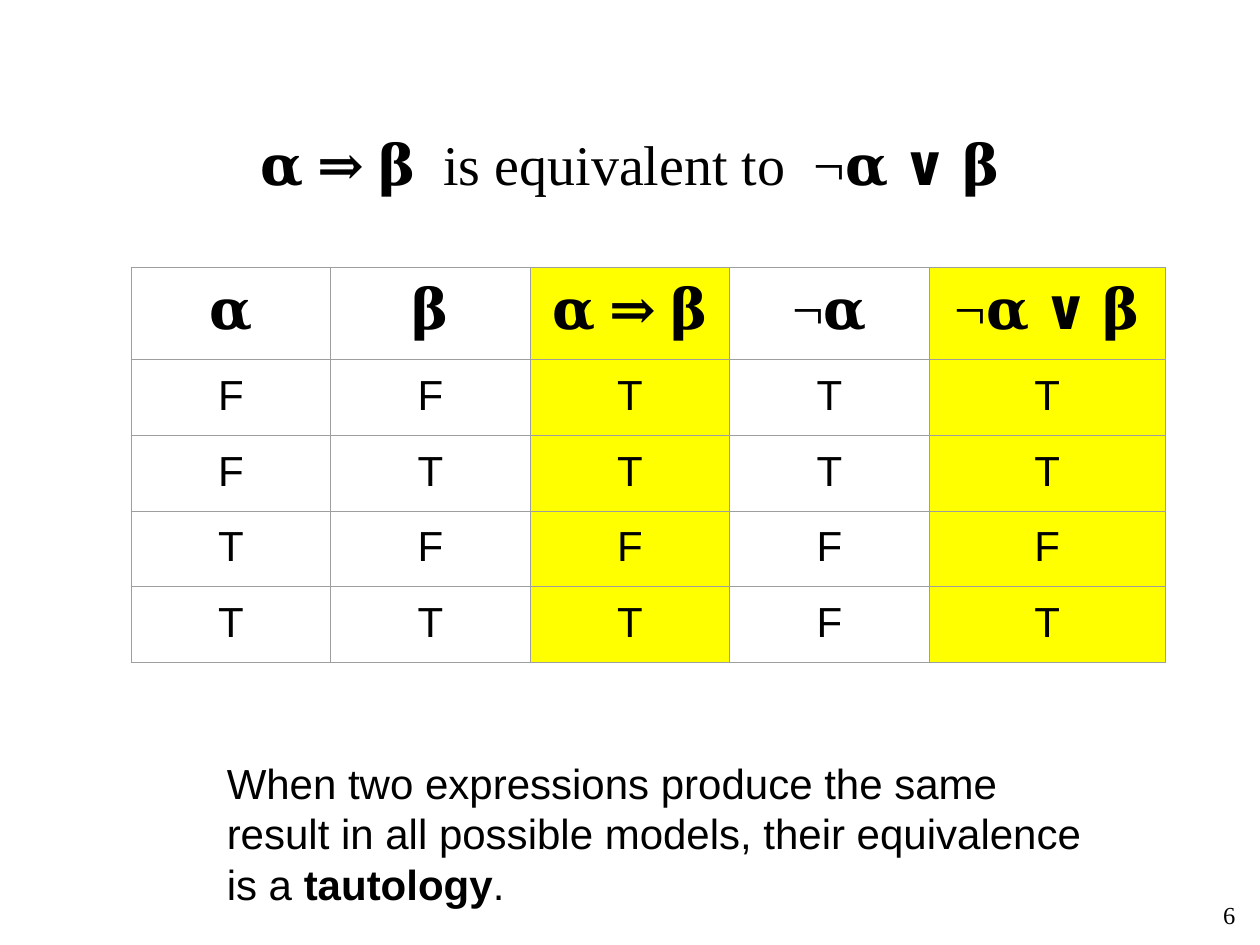
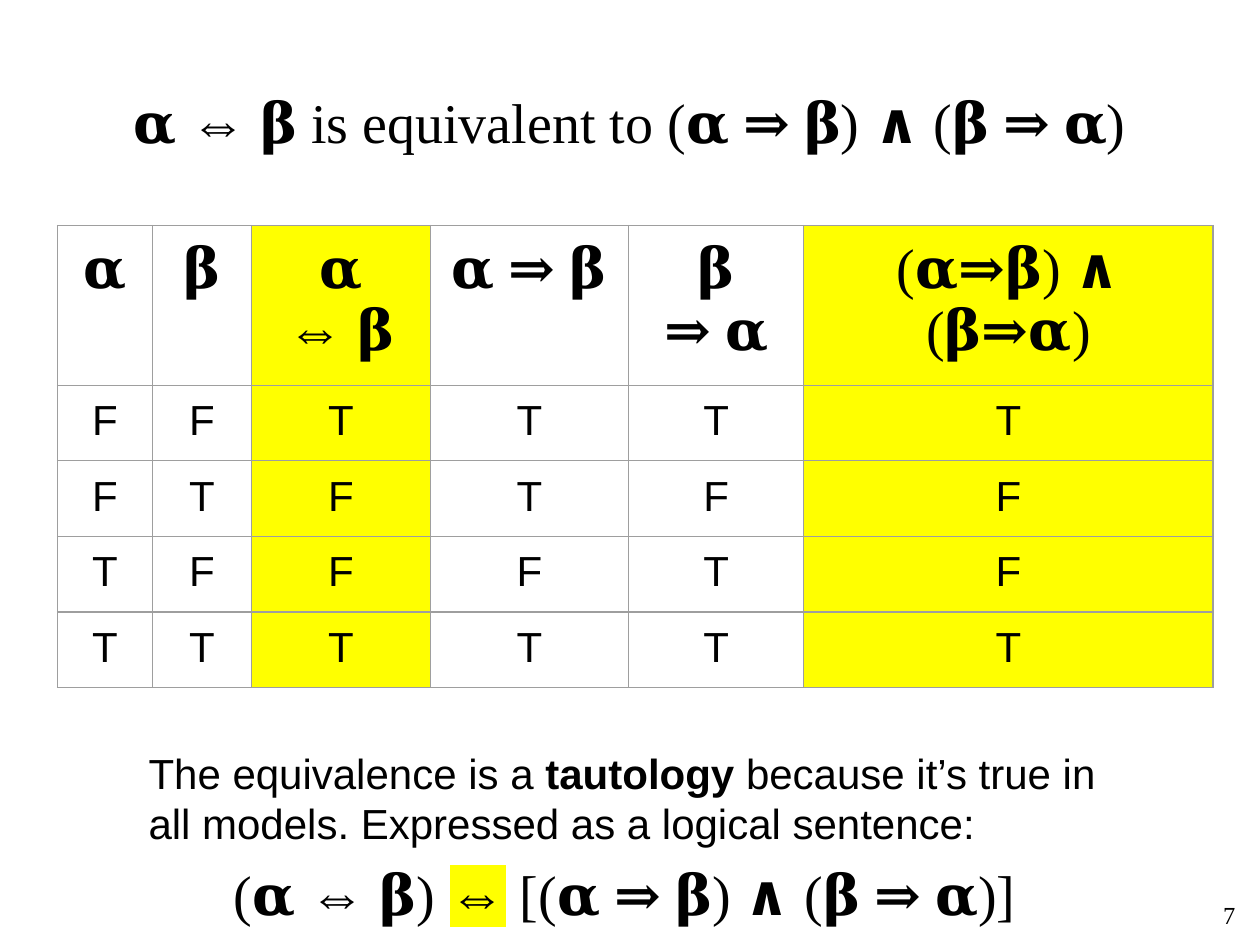
from dataclasses import dataclass
from itertools import product

from lxml import etree
from pptx import Presentation
from pptx.dml.color import RGBColor
from pptx.enum.text import MSO_ANCHOR, MSO_AUTO_SIZE, PP_ALIGN
from pptx.oxml.ns import qn
from pptx.util import Pt

LEFT, CENTER, RIGHT = PP_ALIGN.LEFT, PP_ALIGN.CENTER, PP_ALIGN.RIGHT
TOP, MIDDLE = MSO_ANCHOR.TOP, MSO_ANCHOR.MIDDLE
NO_FIT = MSO_AUTO_SIZE.NONE


@dataclass(frozen=True)
class Theme:
    ink: str = "000000"
    mark: str = "FFFF00"
    grid: str = "9E9E9E"
    serif: str = "Times New Roman"
    sans: str = "Arial"
    formula: int = 32
    body: int = 24
    number: int = 14
    formula_gap: float = 6.4
    border: float = 0.75
    inset: float = 7.2


class Deck:
    """Holds the theme and the current slide."""

    def __init__(self, theme):
        self.t = theme
        self.prs = Presentation()
        self.prs.slide_width, self.prs.slide_height = Pt(720), Pt(540)
        self.s = None

    # Text formatting
    def format_runs(self, p, font, size, align):
        p.alignment = align
        for r in p.runs:
            r.font.name, r.font.size = font, Pt(size)
            r.font.color.rgb = RGBColor.from_string(self.t.ink)

    def format_formula(self, p):
        p.space_before = Pt(self.t.formula_gap)
        self.format_runs(p, self.t.serif, self.t.formula, CENTER)

    def format_body(self, p, align=LEFT):
        self.format_runs(p, self.t.sans, self.t.body, align)

    def highlight(self, r):
        hl = etree.Element(qn("a:highlight"))
        etree.SubElement(hl, qn("a:srgbClr"), val=self.t.mark)
        r.font._element.find(qn("a:solidFill")).addnext(hl)

    # Slide with title and number
    def slide(self, title, top, number):
        self.s = self.prs.slides.add_slide(self.prs.slide_layouts[5])
        sp = self.s.shapes.title
        sp.left, sp.top, sp.width, sp.height = Pt(54), Pt(top), Pt(612), Pt(90)
        tf = sp.text_frame
        tf.text = title
        tf.word_wrap, tf.auto_size, tf.vertical_anchor = True, NO_FIT, MIDDLE
        self.format_formula(tf.paragraphs[0])
        p = self.textbox(563, 511, 150, 23, inset_y=3.6).paragraphs[0]
        p.text = str(number)
        self.format_runs(p, self.t.serif, self.t.number, RIGHT)

    def textbox(self, x, y, w, h, inset_y):
        tf = self.s.shapes.add_textbox(Pt(x), Pt(y), Pt(w), Pt(h)).text_frame
        tf.word_wrap, tf.vertical_anchor = True, TOP
        tf.margin_left = tf.margin_right = Pt(self.t.inset)
        tf.margin_top = tf.margin_bottom = Pt(inset_y)
        return tf

    # Explanation below the table; every second part is a bold term
    def note(self, x, y, w, h, parts):
        tf = self.textbox(x, y, w, h, self.t.inset)
        p = tf.paragraphs[0]
        for i, text in enumerate(parts):
            r = p.add_run()
            r.text = text
            r.font.bold = i % 2 == 1
        self.format_body(p)
        return tf

    # Centred formula whose middle part is highlighted
    def marked_formula(self, tf, before, marked, after):
        p = tf.add_paragraph()
        for text in (before, marked, after):
            p.add_run().text = text
        self.format_formula(p)
        self.highlight(p.runs[1])

    # Truth table: columns are (heading, width, rule, is marked)
    def truth_table(self, x, y, head_height, columns, row_height=41):
        models = list(product((False, True), repeat=2))
        frame = self.s.shapes.add_table(
            len(models) + 1, len(columns), Pt(x), Pt(y),
            Pt(sum(c[1] for c in columns)),
            Pt(head_height + row_height * len(models)))
        tbl = frame.table
        tbl.first_row = tbl.horz_banding = False
        for i, row in enumerate(tbl.rows):
            row.height = Pt(row_height if i else head_height)
        for j, (heading, width, rule, marked) in enumerate(columns):
            tbl.columns[j].width = Pt(width)
            self.format_formula(self.cell(tbl.cell(0, j), heading, marked))
            for i, model in enumerate(models, 1):
                value = "T" if rule(*model) else "F"
                p = self.cell(tbl.cell(i, j), value, marked)
                self.format_body(p, CENTER)

    def cell(self, cell, text, marked):
        cell.text = text
        cell.margin_left = cell.margin_right = Pt(self.t.inset)
        cell.margin_top = cell.margin_bottom = Pt(self.t.inset)
        cell.vertical_anchor = TOP
        if marked:
            cell.fill.solid()
            cell.fill.fore_color.rgb = RGBColor.from_string(self.t.mark)
        else:
            cell.fill.background()
        tc_pr = cell._tc.get_or_add_tcPr()
        for i, side in enumerate(("lnL", "lnR", "lnT", "lnB")):
            ln = etree.Element(qn(f"a:{side}"), w=str(Pt(self.t.border)))
            fill = etree.SubElement(ln, qn("a:solidFill"))
            etree.SubElement(fill, qn("a:srgbClr"), val=self.t.grid)
            tc_pr.insert(i, ln)
        return cell.text_frame.paragraphs[0]


# Logical rules
def alpha(a, b):
    return a


def beta(a, b):
    return b


def not_alpha(a, b):
    return not a


def implies(a, b):
    return not a or b


def implied_by(a, b):
    return implies(b, a)


def iff(a, b):
    return a == b


def both_ways(a, b):
    return implies(a, b) and implied_by(a, b)


def main():
    d = Deck(Theme())

    # Implication
    d.slide("𝛂 ⇒ 𝛃  is equivalent to  ¬𝛂 ∨ 𝛃", 48, 6)
    d.truth_table(75, 152.8, 50, [
        ("𝛂", 114, alpha, False),
        ("𝛃", 114, beta, False),
        ("𝛂 ⇒ 𝛃", 114, implies, True),
        ("¬𝛂", 114, not_alpha, False),
        ("¬𝛂 ∨ 𝛃", 135, implies, True),
    ])
    d.note(122.5, 425.5, 515, 98, [
        "When two expressions produce the same result in all possible "
        "models, their equivalence is a ", "tautology", "."])

    # Biconditional
    d.slide("𝛂 ⇔ 𝛃 is equivalent to (𝛂 ⇒ 𝛃) ∧ (𝛃 ⇒ 𝛂)", 24, 7)
    d.truth_table(32.8, 128.8, 85.6, [
        ("𝛂", 54.3, alpha, False),
        ("𝛃", 56.6, beta, False),
        ("𝛂 ⇔ 𝛃", 102.3, iff, True),
        ("𝛂 ⇒ 𝛃", 113.1, implies, False),
        ("𝛃 ⇒ 𝛂", 100.4, implied_by, False),
        ("(𝛂⇒𝛃) ∧ (𝛃⇒𝛂)", 233.8, both_ways, True),
    ])
    tf = d.note(77.8, 419.8, 558.7, 114.5, [
        "The equivalence is a ", "tautology",
        " because it’s true in all models. Expressed as a logical sentence:"])
    d.marked_formula(tf, "(𝛂 ⇔ 𝛃) ", "⇔", " [(𝛂 ⇒ 𝛃) ∧ (𝛃 ⇒ 𝛂)]")

    d.prs.save("out.pptx")


if __name__ == "__main__":
    main()
